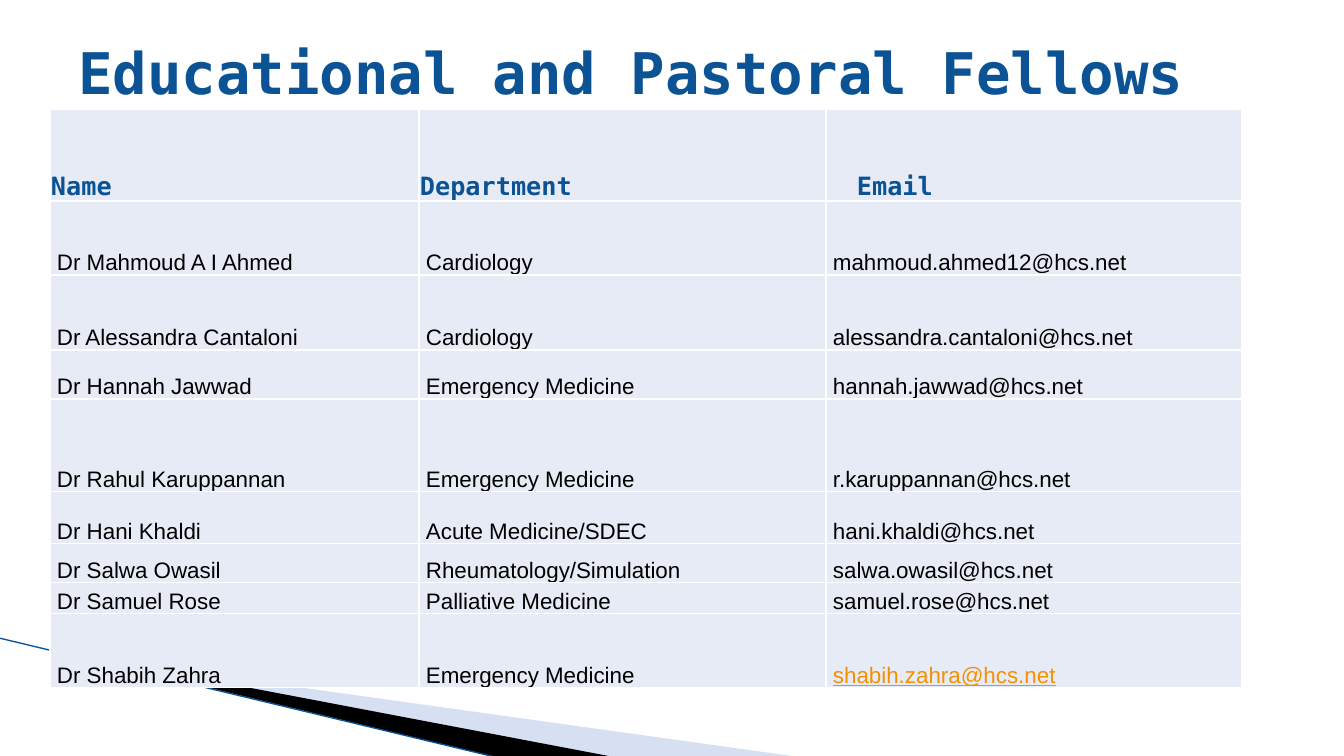
"""Build the slide that lists the educational and pastoral fellows."""
from lxml import etree
from pptx import Presentation
from pptx.dml.color import RGBColor
from pptx.enum.shapes import MSO_CONNECTOR
from pptx.enum.text import MSO_ANCHOR, MSO_AUTO_SIZE, PP_ALIGN
from pptx.oxml.ns import qn
from pptx.util import Pt

EMU_PER_PX = 12192000 / 1344
STRAIGHT = MSO_CONNECTOR.STRAIGHT
MIDDLE, BOTTOM = MSO_ANCHOR.MIDDLE, MSO_ANCHOR.BOTTOM
NO_AUTOFIT = MSO_AUTO_SIZE.NONE
LEFT = PP_ALIGN.LEFT
MONO, SANS = "DejaVu Sans Mono", "Arial"
COLORS = {"blue": "0B5394", "cell": "E7EBF5", "white": "FFFFFF",
          "black": "000000", "wedge": "9DB2E1", "link": "F49100"}

HEADER = ("Name", "Department", "Email")
FELLOWS = [
    ("Dr Mahmoud A I Ahmed", "Cardiology", "mahmoud.ahmed12@hcs.net"),
    ("Dr Alessandra Cantaloni", "Cardiology", "alessandra.cantaloni@hcs.net"),
    ("Dr Hannah Jawwad", "Emergency Medicine", "hannah.jawwad@hcs.net"),
    ("Dr Rahul Karuppannan", "Emergency Medicine", "r.karuppannan@hcs.net"),
    ("Dr Hani Khaldi", "Acute Medicine/SDEC", "hani.khaldi@hcs.net"),
    ("Dr Salwa Owasil", "Rheumatology/Simulation", "salwa.owasil@hcs.net"),
    ("Dr Samuel Rose", "Palliative Medicine", "samuel.rose@hcs.net"),
    ("Dr Shabih Zahra", "Emergency Medicine", "shabih.zahra@hcs.net"),
]
COLUMN_WIDTHS = (369, 407, 416)
ROW_HEIGHTS = (92, 74, 75, 49, 93, 52, 39, 31, 74)
HEADER_INSETS = (1, 1, 31)
WEDGES = [
    ("wedge", 40, [(74, 656), (799, 757), (613, 757), (74, 655)]),
    ("black", 100, [(72, 654), (614, 757), (500, 758), (73, 655)]),
]


def px(length):
    """Turn pixels into EMU."""
    return round(length * EMU_PER_PX)


def add_run(paragraph, text, font_name, size, color, bold=False):
    """Add one formatted run and return it."""
    run = paragraph.add_run()
    run.text = text
    run.font.name = font_name
    run.font.size = Pt(size)
    run.font.bold = bold
    run.font.color.rgb = RGBColor.from_string(COLORS[color])
    return run


presentation = Presentation()
presentation.slide_width = px(1344)
presentation.slide_height = px(756)
slide = presentation.slides.add_slide(presentation.slide_layouts[5])

title = slide.shapes.title
title.left, title.top, title.width, title.height = px(68), px(9), px(1210), px(126)
title.text_frame.auto_size = NO_AUTOFIT
title.text_frame.word_wrap = True
title.text_frame.vertical_anchor = MIDDLE
title_paragraph = title.text_frame.paragraphs[0]
title_paragraph.alignment = LEFT
add_run(title_paragraph, "Educational and Pastoral Fellows", MONO, 41, "blue", True)

for color, opacity, points in WEDGES:
    builder = slide.shapes.build_freeform(*points[0], scale=EMU_PER_PX)
    builder.add_line_segments(points[1:], close=True)
    wedge = builder.convert_to_shape()
    wedge.shadow.inherit = False
    wedge.fill.solid()
    wedge.fill.fore_color.rgb = RGBColor.from_string(COLORS[color])
    wedge.line.fill.background()
    if opacity < 100:
        fill_color = wedge.fill._xPr.find(qn("a:solidFill"))[0]
        etree.SubElement(fill_color, qn("a:alpha"), val=str(opacity * 1000))

edge = slide.shapes.add_connector(STRAIGHT, px(-1), px(638), px(499), px(758))
edge.line.color.rgb = RGBColor.from_string(COLORS["blue"])
edge.line.width = Pt(0.95)
etree.SubElement(edge._element.spPr, qn("a:effectLst"))

rows = [HEADER] + FELLOWS
table = slide.shapes.add_table(len(rows), len(HEADER), px(50), px(109),
                               px(sum(COLUMN_WIDTHS)), px(sum(ROW_HEIGHTS))).table
table.first_row = False
table.horz_banding = False
for column, width in zip(table.columns, COLUMN_WIDTHS):
    column.width = px(width)
for row, height in zip(table.rows, ROW_HEIGHTS):
    row.height = px(height)

for row_index, texts in enumerate(rows):
    for column_index, text in enumerate(texts):
        cell = table.cell(row_index, column_index)
        cell.vertical_anchor = BOTTOM
        cell.margin_left = cell.margin_right = px(7)
        cell.margin_top = cell.margin_bottom = 0
        properties = cell._tc.get_or_add_tcPr()
        for side in ("a:lnL", "a:lnR", "a:lnT", "a:lnB"):
            border = etree.SubElement(properties, qn(side), w=str(Pt(1)))
            border_fill = etree.SubElement(border, qn("a:solidFill"))
            etree.SubElement(border_fill, qn("a:srgbClr"), val=COLORS["white"])
        cell.fill.solid()
        cell.fill.fore_color.rgb = RGBColor.from_string(COLORS["cell"])
        paragraph = cell.text_frame.paragraphs[0]
        if row_index == 0:
            cell.margin_left = px(HEADER_INSETS[column_index])
            cell.margin_right = px(1)
            add_run(paragraph, text, MONO, 18, "blue", True)
        elif text.startswith("shabih"):
            add_run(paragraph, text, SANS, 16, "link").font.underline = True
        else:
            add_run(paragraph, text, SANS, 16, "black")

presentation.save("out.pptx")
